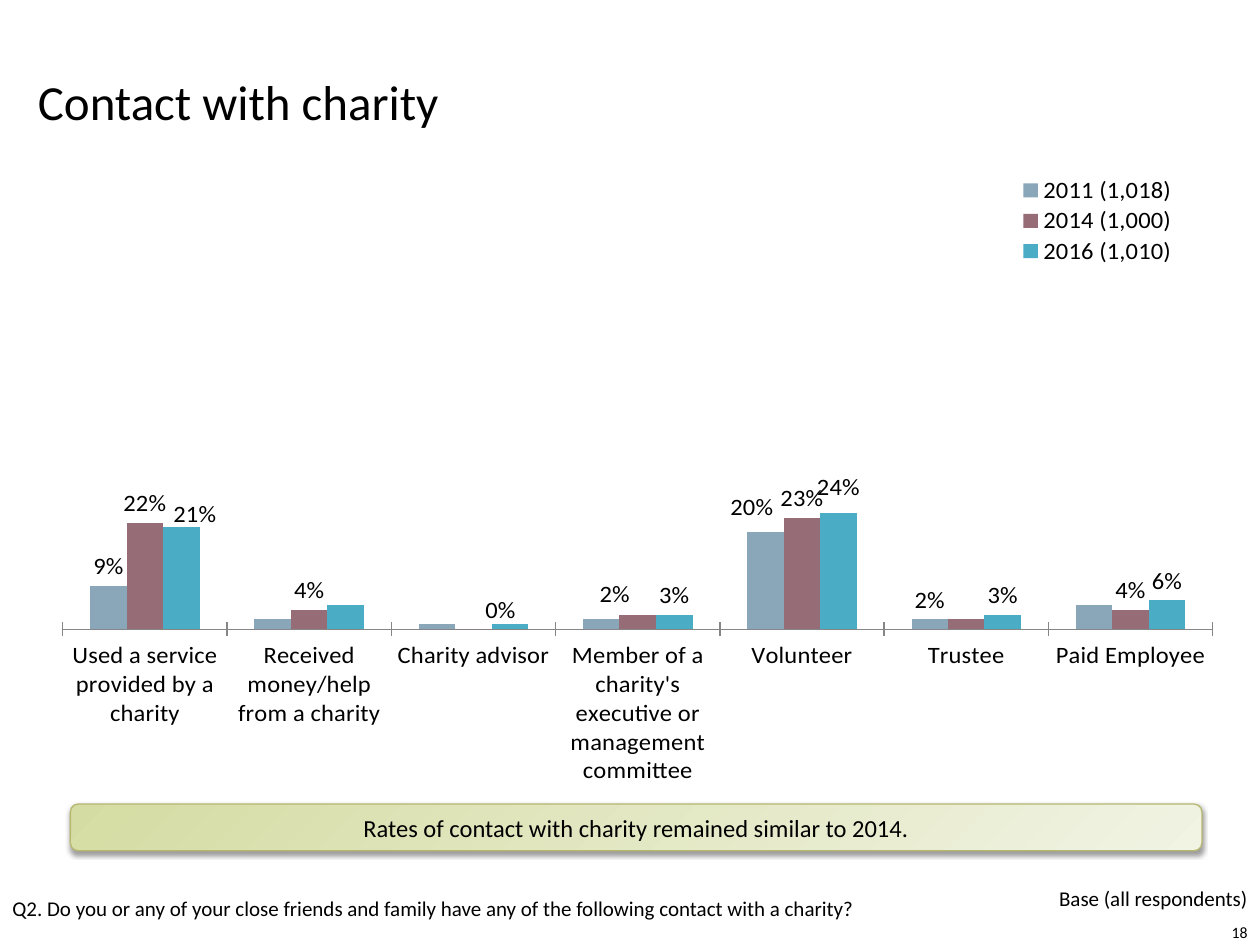
from copy import deepcopy
from pptx import Presentation
from pptx.chart.data import CategoryChartData
from pptx.dml.color import RGBColor
from pptx.enum.chart import XL_CHART_TYPE, XL_LABEL_POSITION, XL_LEGEND_POSITION, XL_TICK_MARK
from pptx.enum.shapes import MSO_SHAPE
from pptx.enum.text import MSO_ANCHOR, PP_ALIGN
from pptx.oxml import parse_xml
from pptx.oxml.ns import nsdecls, qn
from pptx.util import Cm, Pt

BLACK = RGBColor(0x00, 0x00, 0x00)
GREY = RGBColor(0x86, 0x86, 0x86)
BLUE = RGBColor(0x8A, 0xA7, 0xB9)
PLUM = RGBColor(0x96, 0x6D, 0x77)
TEAL = RGBColor(0x4B, 0xAC, 0xC6)
GREEN = RGBColor(0xD5, 0xDC, 0xA3)
PALE = RGBColor(0xF1, 0xF3, 0xE3)
OLIVE = RGBColor(0xB7, 0xB8, 0x70)

CATEGORIES = ["Used a service provided by a charity", "Received money/help from a charity",
              "Charity advisor", "Member of a charity's executive or management committee",
              "Volunteer", "Trustee", "Paid Employee"]
SERIES = [
    {"name": "2011 (1,018)", "color": BLUE, "values": [0.09, 0.02, 0.01, 0.02, 0.2, 0.02, 0.05],
     "labels": {1: None, 2: None, 3: (0.01, -0.01), 4: (-0.01, -0.01), 6: None}},
    {"name": "2014 (1,000)", "color": PLUM, "values": [0.22, 0.04, 0, 0.03, 0.23, 0.02, 0.04],
     "labels": {2: (0.02, 0), 3: None, 5: None}},
    {"name": "2016 (1,010)", "color": TEAL, "values": [0.21, 0.05, 0.01, 0.03, 0.24, 0.03, 0.06],
     "labels": {0: (0.01, 0.01), 1: None, 2: None, 4: (0, -0.01)}},
]


def set_font(font, size):
    values = {"name": "Calibri", "size": Pt(size), "bold": False}
    for key, value in values.items():
        setattr(font, key, value)
    font.color.rgb = BLACK


def write(shape, text, size, align=PP_ALIGN.LEFT, anchor=MSO_ANCHOR.TOP):
    tf = shape.text_frame
    for key, value in {"word_wrap": True, "vertical_anchor": anchor}.items():
        setattr(tf, key, value)
    p = tf.paragraphs[0]
    p.alignment = align
    r = p.add_run()
    r.text = text
    set_font(r.font, size)


def add_text(s, box, text, size, **format):
    write(s.shapes.add_textbox(*map(Cm, box)), text, size, **format)


def add_title(s, text):
    title = s.shapes.title
    box = {"left": 0.51, "top": 0.53, "width": 20.19, "height": 3}
    for key, value in box.items():
        setattr(title, key, Cm(value))
    write(title, text, 28, anchor=MSO_ANCHOR.MIDDLE)


def make_layout(modes, sizes):
    parts = [*modes.items(), *sizes.items()]
    inner = "".join(f'<c:{key} val="{value}"/>' for key, value in parts)
    return parse_xml(f'<c:layout {nsdecls("c")}><c:manualLayout>{inner}</c:manualLayout></c:layout>')


def place(element, index, modes, sizes):
    for old in element.findall(qn("c:layout")):
        element.remove(old)
    element.insert(index, make_layout(modes, sizes))


def adjust_labels(labels, changes):
    group = labels._element
    shared = [child for child in group if child.tag != qn("c:showLeaderLines")]
    for position, (index, shift) in enumerate(changes.items()):
        label = parse_xml(f'<c:dLbl {nsdecls("c")}><c:idx val="{index}"/></c:dLbl>')
        if shift is None:
            label.append(parse_xml(f'<c:delete {nsdecls("c")} val="1"/>'))
        else:
            label.append(make_layout({}, dict(zip("xy", shift))))
            label.extend(deepcopy(shared))
        group.insert(position, label)


def format_series(series, source):
    series.format.fill.solid()
    series.format.fill.fore_color.rgb = source["color"]
    labels = series.data_labels
    values = {"show_value": True, "number_format": "0%", "number_format_is_linked": False,
              "position": XL_LABEL_POSITION.OUTSIDE_END}
    for key, value in values.items():
        setattr(labels, key, value)
    set_font(labels.font, 14)
    adjust_labels(labels, source["labels"])


def format_axes(chart):
    axis = chart.category_axis
    axis.major_tick_mark = XL_TICK_MARK.CROSS
    axis.format.line.color.rgb = GREY
    set_font(axis.tick_labels.font, 14)
    values = {"visible": False, "has_major_gridlines": False,
              "minimum_scale": 0, "maximum_scale": 1}
    for key, value in values.items():
        setattr(chart.value_axis, key, value)


def add_contact_chart(s):
    data = CategoryChartData(number_format="0%")
    data.categories = CATEGORIES
    for source in SERIES:
        data.add_series(source["name"], source["values"])
    box = map(Cm, (-2.92, 2.77, 27.38, 13.06))
    chart = s.shapes.add_chart(XL_CHART_TYPE.COLUMN_CLUSTERED, *box, data).chart
    set_font(chart.font, 18)
    chart.has_title = False
    plot = chart.plots[0]
    for key, value in {"gap_width": 150, "overlap": 0, "vary_by_categories": False}.items():
        setattr(plot, key, value)
    for series, source in zip(plot.series, SERIES):
        format_series(series, source)
    format_axes(chart)
    chart.has_legend = True
    legend = chart.legend
    legend.position = XL_LEGEND_POSITION.RIGHT
    legend.include_in_layout = False
    set_font(legend.font, 14)
    edges = {"xMode": "edge", "yMode": "edge"}
    place(legend._element, 1, edges, {"x": 0.85, "y": 0.06, "w": 0.13, "h": 0.15})
    area = chart._chartSpace.chart.plotArea
    place(area, 0, {"layoutTarget": "inner", **edges},
          {"x": 0.153, "y": 0.011, "w": 0.847, "h": 0.785})


def add_finding(s, text):
    sp = s.shapes.add_shape(MSO_SHAPE.ROUNDED_RECTANGLE, *map(Cm, (1.42, 16.21, 22.81, 0.94)))
    sp.fill.gradient()
    sp.fill.gradient_angle = 315
    for stop, color in zip(sp.fill.gradient_stops, (GREEN, PALE)):
        stop.color.rgb = color
    sp.line.color.rgb = OLIVE
    sp.line.width = Pt(0.75)
    sp.shadow.inherit = False
    effects = sp._element.spPr.find(qn("a:effectLst"))
    effects.append(parse_xml(
        f'<a:outerShdw {nsdecls("a")} blurRad="{Pt(3.1)}" dist="{Pt(1.6)}" dir="5400000" '
        'rotWithShape="0"><a:srgbClr val="000000"><a:alpha val="38000"/></a:srgbClr></a:outerShdw>'))
    write(sp, text, 14, PP_ALIGN.CENTER, MSO_ANCHOR.MIDDLE)


def main():
    prs = Presentation()
    prs.slide_width, prs.slide_height = Cm(25.4), Cm(19.05)
    s = prs.slides.add_slide(prs.slide_layouts[5])
    add_contact_chart(s)
    add_text(s, (19.48, 18.52, 5.92, 0.53), "18", 9,
             align=PP_ALIGN.RIGHT, anchor=MSO_ANCHOR.MIDDLE)
    add_title(s, "Contact with charity")
    add_text(s, (0, 17.93, 18.01, 1.55), "Q2. Do you or any of your close friends and family "
             "have any of the following contact with a charity?", 12)
    add_text(s, (3.78, 17.73, 21.62, 0.76), "Base (all respondents)", 12, align=PP_ALIGN.RIGHT)
    add_finding(s, "Rates of contact with charity remained similar to 2014.")
    prs.save("out.pptx")


if __name__ == "__main__":
    main()
